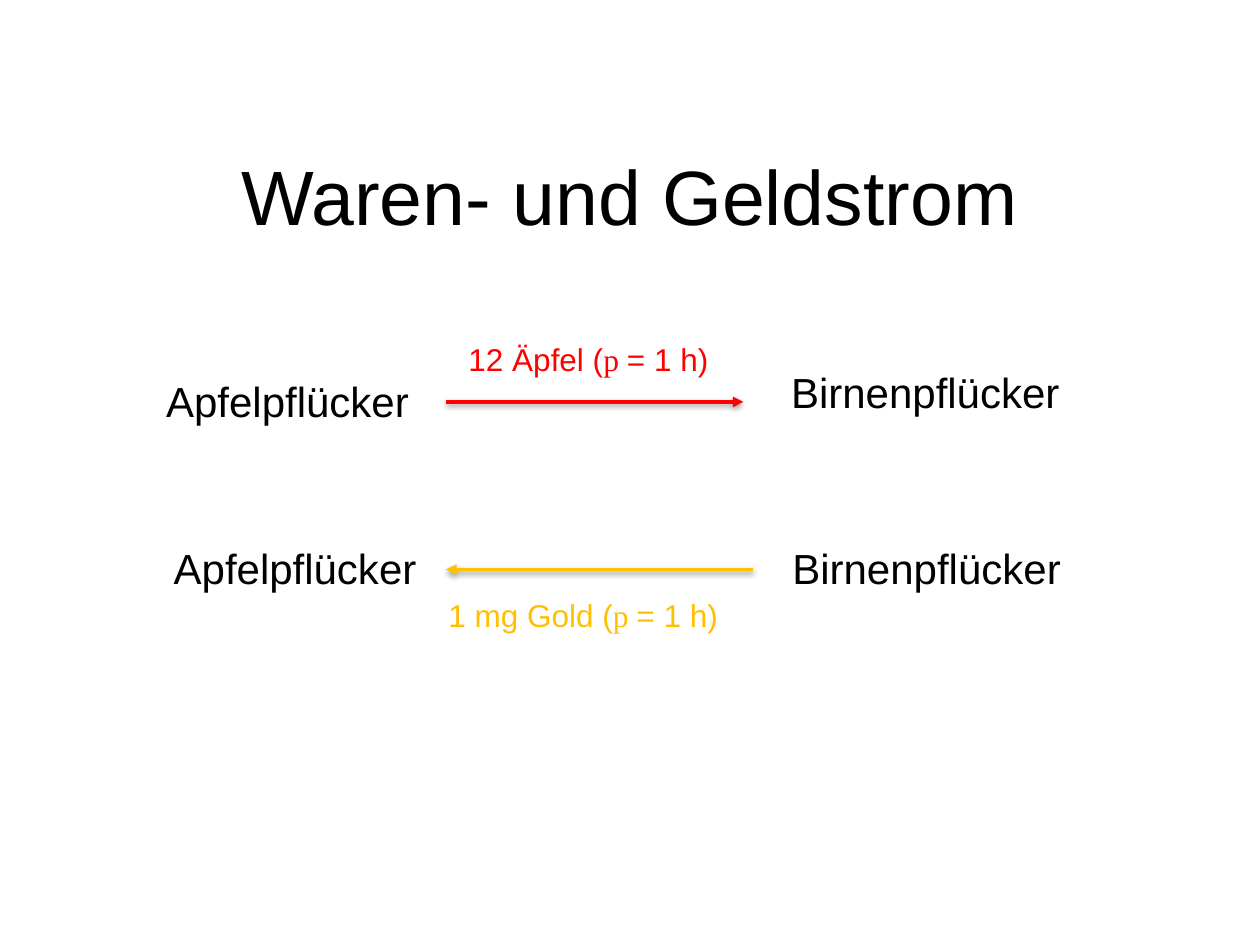
from lxml.etree import SubElement
from pptx import Presentation
from pptx.dml.color import RGBColor
from pptx.enum.shapes import MSO_CONNECTOR
from pptx.enum.text import MSO_ANCHOR, MSO_AUTO_SIZE, PP_ALIGN
from pptx.oxml import parse_xml
from pptx.oxml.ns import nsdecls, qn
from pptx.util import Inches, Pt

BLACK = RGBColor(0x00, 0x00, 0x00)
RED = RGBColor(0xFF, 0x00, 0x00)
GOLD = RGBColor(0xFF, 0xC0, 0x00)
SANS = "Arial"
SERIF = "Times New Roman"
SHADOW = (
    f'<a:effectLst {nsdecls("a")}>'
    '<a:outerShdw blurRad="40000" dist="20000" dir="5400000" rotWithShape="0">'
    '<a:srgbClr val="000000"><a:alpha val="38000"/></a:srgbClr>'
    "</a:outerShdw></a:effectLst>"
)


def add_text(page, spans, left, top, width, height, size=24, color=BLACK,
             align=PP_ALIGN.LEFT, anchor=MSO_ANCHOR.TOP, wrap=False):
    """Add a one-paragraph text box from (text, font) spans."""
    box = page.shapes.add_textbox(
        Inches(left), Inches(top), Inches(width), Inches(height))
    frame = box.text_frame
    frame.word_wrap = wrap
    frame.auto_size = MSO_AUTO_SIZE.NONE if wrap else MSO_AUTO_SIZE.SHAPE_TO_FIT_TEXT
    frame.vertical_anchor = anchor
    paragraph = frame.paragraphs[0]
    paragraph.alignment = align
    for text, font in spans:
        span = paragraph.add_run()
        span.text = text
        span.font.name = font
        span.font.size = Pt(size)
        span.font.color.rgb = color


def add_person(page, name, left, top, width):
    """Add the name of one trading partner."""
    add_text(page, [(name, SANS)], left, top, width, 0.5)


def add_flow_label(page, goods, left, top, width, color):
    """Add the label that gives the goods and their labour time."""
    spans = [(f"{goods} (", SANS), ("p ", SERIF), ("= 1 h)", SANS)]
    add_text(page, spans, left, top, width, 0.4, size=18, color=color)


def add_flow_arrow(page, start, end, y, color):
    """Add a horizontal shadowed arrow from start to end."""
    arrow = page.shapes.add_connector(
        MSO_CONNECTOR.STRAIGHT, Inches(start), Inches(y), Inches(end), Inches(y))
    arrow.line.color.rgb = color
    arrow.line.width = Pt(2)
    properties = arrow.element.spPr
    SubElement(properties.find(qn("a:ln")), qn("a:tailEnd"), type="triangle")
    properties.append(parse_xml(SHADOW))


def main():
    """Build the slide on the flows of goods and money."""
    deck = Presentation()
    deck.slide_width, deck.slide_height = Inches(10), Inches(7.5)
    page = deck.slides.add_slide(deck.slide_layouts[6])

    add_text(page, [("Waren- und Geldstrom", SANS)], 0.5, 0.92, 9, 1.25, size=44,
             align=PP_ALIGN.CENTER, anchor=MSO_ANCHOR.MIDDLE, wrap=True)

    add_person(page, "Apfelpflücker", 1.22, 2.93, 2.15)
    add_person(page, "Birnenpflücker", 6.18, 2.86, 2.36)
    add_flow_arrow(page, 3.54, 5.9, 3.19, RED)
    add_flow_label(page, "12 Äpfel", 3.62, 2.65, 2.13, RED)

    add_person(page, "Apfelpflücker", 1.28, 4.26, 2.15)
    add_person(page, "Birnenpflücker", 6.19, 4.26, 2.36)
    add_flow_arrow(page, 5.98, 3.54, 4.52, GOLD)
    add_flow_label(page, "1 mg Gold", 3.46, 4.68, 2.37, GOLD)

    deck.save("out.pptx")


if __name__ == "__main__":
    main()
